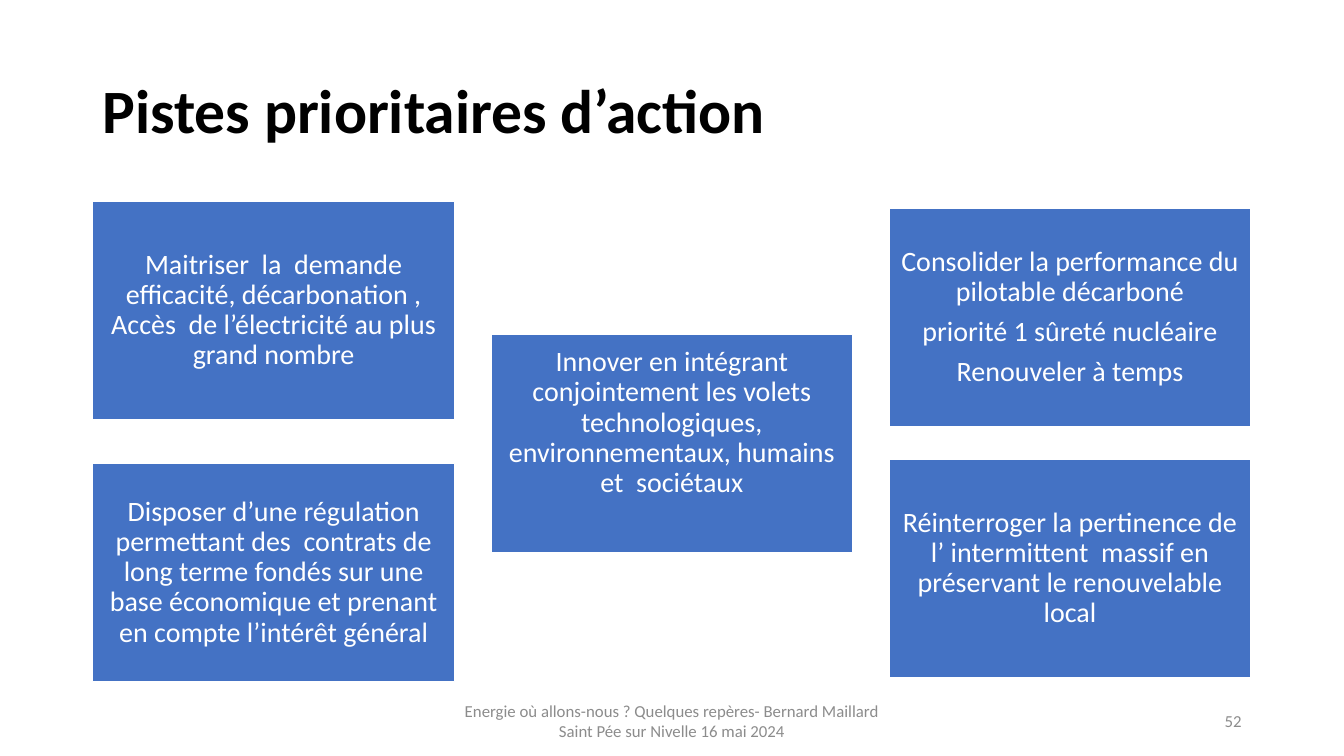
from dataclasses import dataclass

from pptx import Presentation
from pptx import util as u
from pptx.dml.color import RGBColor
from pptx.enum import shapes, text

WHITE = RGBColor(0xFF, 0xFF, 0xFF)
BLACK = RGBColor(0, 0, 0)
BLUE = RGBColor(0x44, 0x72, 0xC4)
GREY = RGBColor(0x8C, 0x8C, 0x8C)

LEFT, STEP = 66.24, 284.4
WIDTH, HEIGHT = 258.5, 155.5
INSET = 6
ALIGN = text.PP_ALIGN


@dataclass
class Card:
    col: int
    top: float
    lines: list[str]
    lift: float = 0  # extra bottom inset, raises the text


CARDS = [
    Card(0, 331.2, ["Disposer d’une régulation permettant des  contrats de long terme "
                    "fondés sur une base économique et prenant en compte l’intérêt général"]),
    Card(0, 144, ["Maitriser  la  demande efficacité, décarbonation , "
                  "Accès  de l’électricité au plus grand nombre"]),
    Card(2, 328.3, ["Réinterroger la pertinence de l’ intermittent  massif "
                    "en préservant le renouvelable local"]),
    Card(1, 239, ["Innover en intégrant conjointement les volets technologiques, "
                  "environnementaux, humains et  sociétaux"], lift=29),
    Card(2, 149, ["Consolider la performance du pilotable décarboné",
                  "priorité 1 sûreté nucléaire", "Renouveler à temps"]),
]


def write(shape, lines: list[str], *, size: float, color: RGBColor,
          align=ALIGN.LEFT, bold: bool = False, spacing: float = 1,
          after: float = 0) -> None:
    frame = shape.text_frame
    frame.word_wrap = True
    frame.vertical_anchor = text.MSO_ANCHOR.MIDDLE
    for i, line in enumerate(lines):
        para = frame.add_paragraph() if i else frame.paragraphs[0]
        para.alignment = align
        para.line_spacing = spacing
        para.space_after = u.Pt(after)
        run = para.add_run()
        run.text = line
        font = run.font
        font.name, font.size, font.bold = "Calibri", u.Pt(size), bold
        font.color.rgb = color


def label(slide, left: float, top: float, width: float, height: float,
          line: str, **style) -> None:
    box = slide.shapes.add_textbox(u.Pt(left), u.Pt(top), u.Pt(width), u.Pt(height))
    write(box, [line], **style)


def draw(slide, card: Card) -> None:
    box = slide.shapes.add_shape(
        shapes.MSO_SHAPE.RECTANGLE, u.Pt(LEFT + card.col * STEP), u.Pt(card.top),
        u.Pt(WIDTH), u.Pt(HEIGHT))
    box.shadow.inherit = False
    box.fill.solid()
    box.fill.fore_color.rgb = BLUE
    box.line.color.rgb = WHITE
    box.line.width = u.Pt(1)
    frame = box.text_frame
    frame.margin_left = frame.margin_right = frame.margin_top = u.Pt(INSET)
    frame.margin_bottom = u.Pt(INSET + card.lift)
    write(box, card.lines, size=20, color=WHITE, align=ALIGN.CENTER,
          spacing=0.9, after=7)


def main() -> None:
    deck = Presentation()
    deck.slide_width, deck.slide_height = u.Pt(960), u.Pt(540)
    slide = deck.slides.add_slide(deck.slide_layouts[6])
    label(slide, 66, 28.8, 828, 104.4, "Pistes prioritaires d’action",
          size=44, color=BLACK, bold=True, spacing=0.9)
    for card in CARDS:
        draw(slide, card)
    label(slide, 318, 500.5, 324, 28.8,
          "Energie où allons-nous ? Quelques repères- Bernard Maillard "
          "Saint Pée sur Nivelle 16 mai 2024",
          size=12, color=GREY, align=ALIGN.CENTER)
    label(slide, 678, 500.5, 216, 28.8, "52", size=12, color=GREY, align=ALIGN.RIGHT)
    deck.save("out.pptx")


if __name__ == "__main__":
    main()
